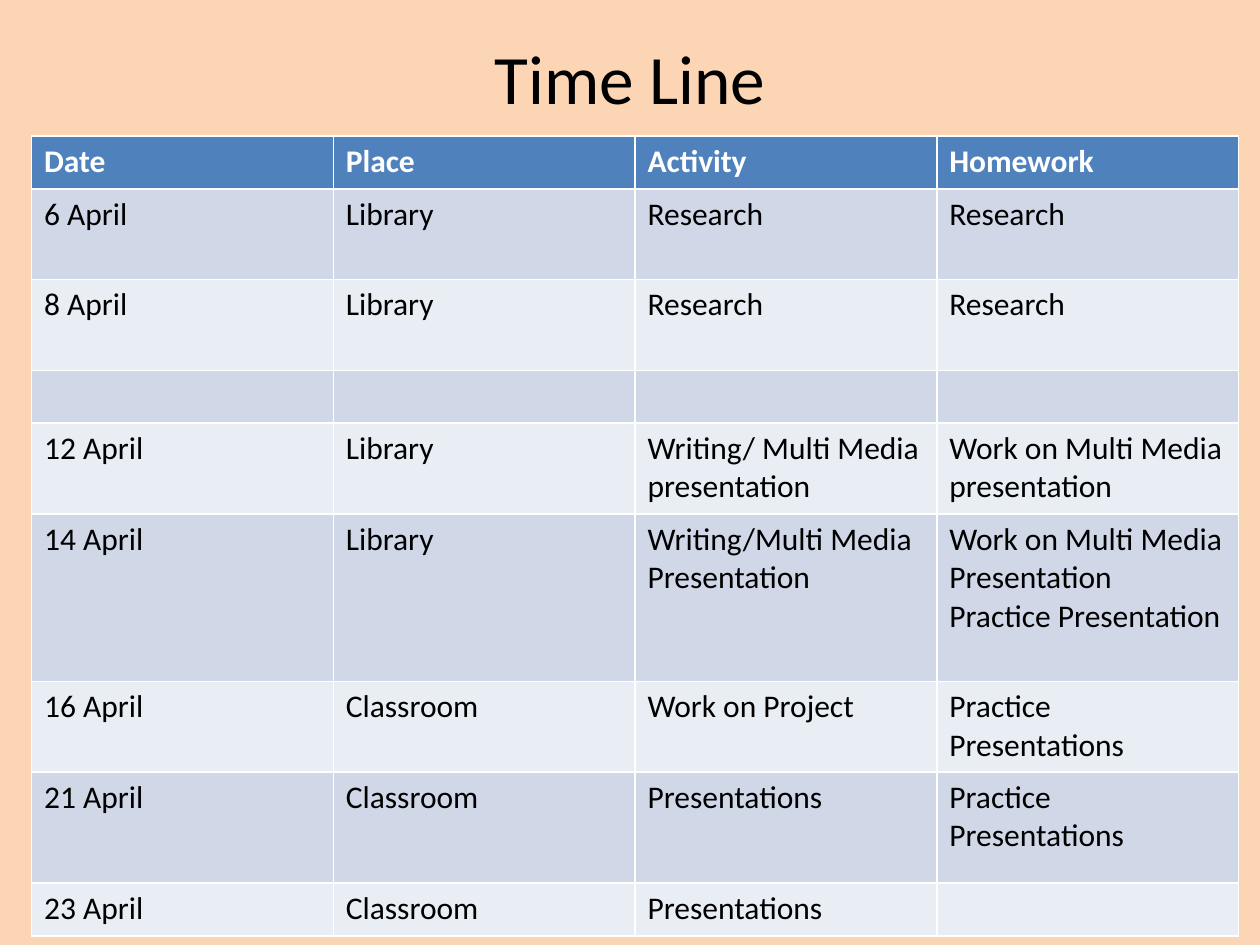
from pptx import Presentation
from pptx.dml.color import RGBColor
from pptx.enum.text import MSO_ANCHOR, PP_ALIGN
from pptx.util import Inches, Pt

MIDDLE = MSO_ANCHOR.MIDDLE
CENTER = PP_ALIGN.CENTER
TITLE_ONLY = 5
FONT = "Calibri"
COLORS = {
    "background": "FCD5B5",
    "header": "4F81BD",
    "odd_row": "D0D8E8",
    "even_row": "E9EDF4",
    "header_text": "FFFFFF",
    "text": "000000",
}
ROWS = [
    ("Date", "Place", "Activity", "Homework"),
    ("6 April", "Library", "Research", "Research"),
    ("8 April", "Library", "Research", "Research"),
    ("", "", "", ""),
    ("12 April", "Library", "Writing/ Multi Media presentation",
     "Work on Multi Media presentation"),
    ("14 April", "Library", "Writing/Multi Media Presentation",
     "Work on Multi Media Presentation\nPractice Presentation"),
    ("16 April", "Classroom", "Work on Project", "Practice Presentations"),
    ("21 April", "Classroom", "Presentations", "Practice Presentations"),
    ("23 April", "Classroom", "Presentations", ""),
]
ROW_HEIGHTS = [0.42, 0.72, 0.72, 0.42, 0.72, 1.33, 0.72, 0.88, 0.42]


def color(name):
    return RGBColor.from_string(COLORS[name])


def set_font(font, size, color_name, bold=False):
    font.name = FONT
    font.size = Pt(size)
    font.bold = bold
    font.color.rgb = color(color_name)


presentation = Presentation()
presentation.slide_width = Inches(10)
presentation.slide_height = Inches(7.5)
slide = presentation.slides.add_slide(presentation.slide_layouts[TITLE_ONLY])
slide.background.fill.solid()
slide.background.fill.fore_color.rgb = color("background")

title = slide.shapes.title
title.left, title.top = Inches(0.5), Inches(0.3)
title.width, title.height = Inches(9), Inches(0.62)
title.text_frame.text = "Time Line"
title.text_frame.vertical_anchor = MIDDLE
title_paragraph = title.text_frame.paragraphs[0]
title_paragraph.alignment = CENTER
set_font(title_paragraph.runs[0].font, 39.6, "text")

# The default table style supplies the white rules between the cells.
table = slide.shapes.add_table(
    len(ROWS), len(ROWS[0]), Inches(0.25), Inches(1.08),
    Inches(9.58), Inches(sum(ROW_HEIGHTS))).table

for row_index, (texts, height) in enumerate(zip(ROWS, ROW_HEIGHTS)):
    table.rows[row_index].height = Inches(height)
    is_header = row_index == 0
    if is_header:
        fill_name = "header"
    else:
        fill_name = "odd_row" if row_index % 2 else "even_row"
    for column_index, text in enumerate(texts):
        cell = table.cell(row_index, column_index)
        cell.fill.solid()
        cell.fill.fore_color.rgb = color(fill_name)
        cell.text = text
        for paragraph in cell.text_frame.paragraphs:
            set_font(paragraph.font, 18,
                     "header_text" if is_header else "text", is_header)

presentation.save("out.pptx")
